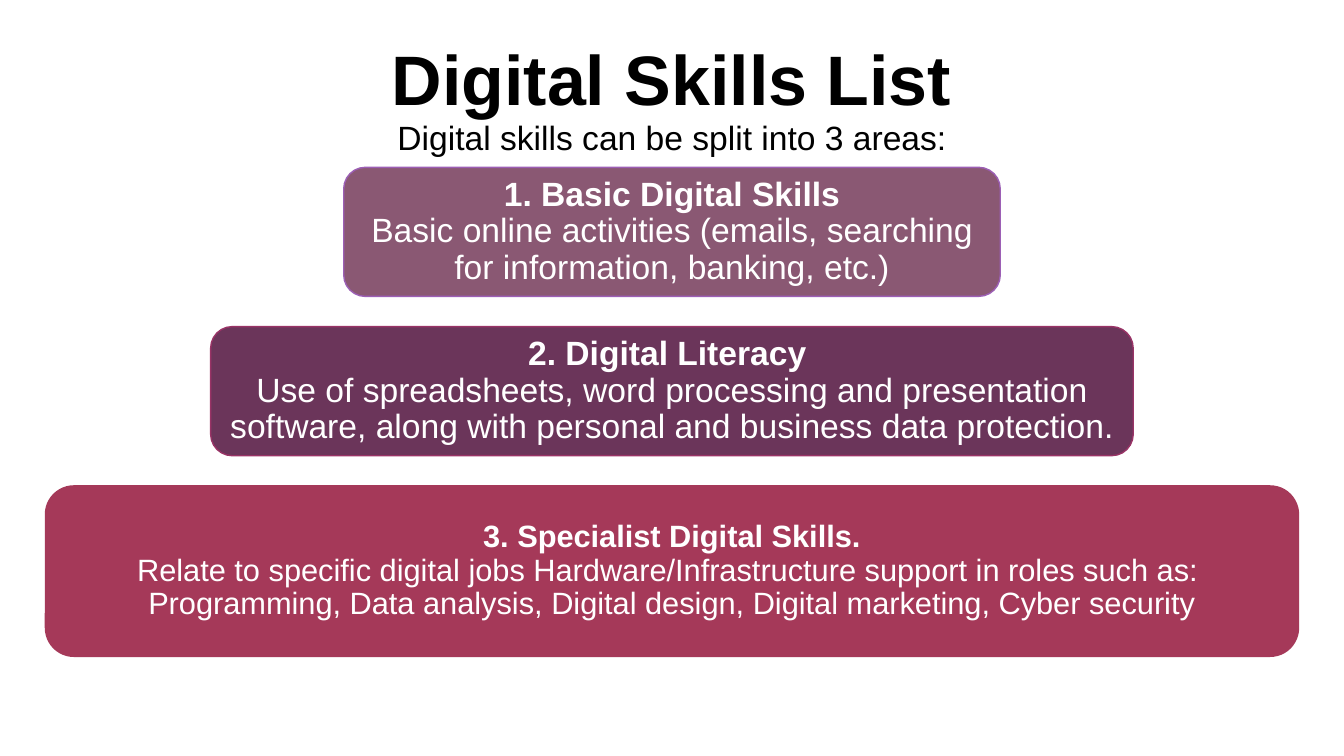
from pptx import Presentation
from pptx.dml.color import RGBColor as RGB
from pptx.enum.shapes import MSO_SHAPE as Shape
from pptx.enum.text import MSO_ANCHOR as Anchor, MSO_AUTO_SIZE as Fit, PP_ALIGN as Align
from pptx.util import Pt

WIDTH, HEIGHT = 960, 540
BLACK = RGB(0x00, 0x00, 0x00)
WHITE = RGB(0xFF, 0xFF, 0xFF)
MAUVE = RGB(0x8A, 0x58, 0x73)
LILAC = RGB(0x9C, 0x5F, 0xB5)
PLUM = RGB(0x6B, 0x35, 0x5A)
BERRY = RGB(0x99, 0x33, 0x66)
ROSE = RGB(0xA5, 0x39, 0x59)


class Deck:
    """Shared style and the current slide."""
    face = "Arial"
    lead = 0.9

    def __init__(self):
        self.prs = Presentation()
        self.prs.slide_width = Pt(WIDTH)
        self.prs.slide_height = Pt(HEIGHT)
        self.slide = self.prs.slides.add_slide(self.prs.slide_layouts[5])

    def style(self, run, size, color, bold):
        font = run.font
        font.name, font.size, font.bold = self.face, Pt(size), bold
        font.color.rgb = color

    def align(self, para):
        para.alignment = Align.CENTER
        para.line_spacing = self.lead

    def title(self, text, sizes, top, width, height):
        box = self.slide.shapes.title
        box.left, box.top = Pt((WIDTH - width) / 2), Pt(top)
        box.width, box.height = Pt(width), Pt(height)
        frame = box.text_frame
        frame.text = text
        frame.auto_size = Fit.NONE
        frame.vertical_anchor = Anchor.TOP
        para = frame.paragraphs[0]
        self.align(para)
        for i, (run, size) in enumerate(zip(para.runs, sizes)):
            self.style(run, size, BLACK, i == 0)

    def card(self, lines, size, top, width, height, fill, edge):
        """Centred rounded box whose first line is bold."""
        box = self.slide.shapes.add_shape(
            Shape.ROUNDED_RECTANGLE, Pt((WIDTH - width) / 2), Pt(top),
            Pt(width), Pt(height))
        box.shadow.inherit = False
        box.fill.solid()
        box.fill.fore_color.rgb = fill
        box.line.color.rgb = edge
        box.line.width = Pt(1)
        frame = box.text_frame
        frame.word_wrap = True
        frame.vertical_anchor = Anchor.MIDDLE
        frame.text = "\n".join(lines)
        for i, para in enumerate(frame.paragraphs):
            self.align(para)
            self.style(para.runs[0], size, WHITE, i == 0)


def main():
    deck = Deck()

    # Heading with its lead-in line
    deck.title("Digital Skills List\vDigital skills can be split into 3 areas:",
               (50, 24), 28.8, 828, 104.4)

    # Skill areas, widening down the slide
    cards = [
        (["1. Basic Digital Skills",
          "Basic online activities (emails, searching for information, "
          "banking, etc.)"], 24, 469, 92.2, MAUVE, LILAC),
        (["2. Digital Literacy ",
          "Use of spreadsheets, word processing and presentation software, "
          "along with personal and business data protection."],
         24, 659, 92.2, PLUM, BERRY),
        (["3. Specialist Digital Skills.",
          "Relate to specific digital jobs Hardware/Infrastructure support "
          "in roles such as: ",
          "Programming, Data analysis, Digital design, Digital marketing, "
          "Cyber security"], 22, 895, 121.7, ROSE, ROSE),
    ]
    top, gap = 119.5, 21.6
    for lines, size, width, height, fill, edge in cards:
        deck.card(lines, size, top, width, height, fill, edge)
        top += height + gap

    deck.prs.save("out.pptx")


if __name__ == "__main__":
    main()
